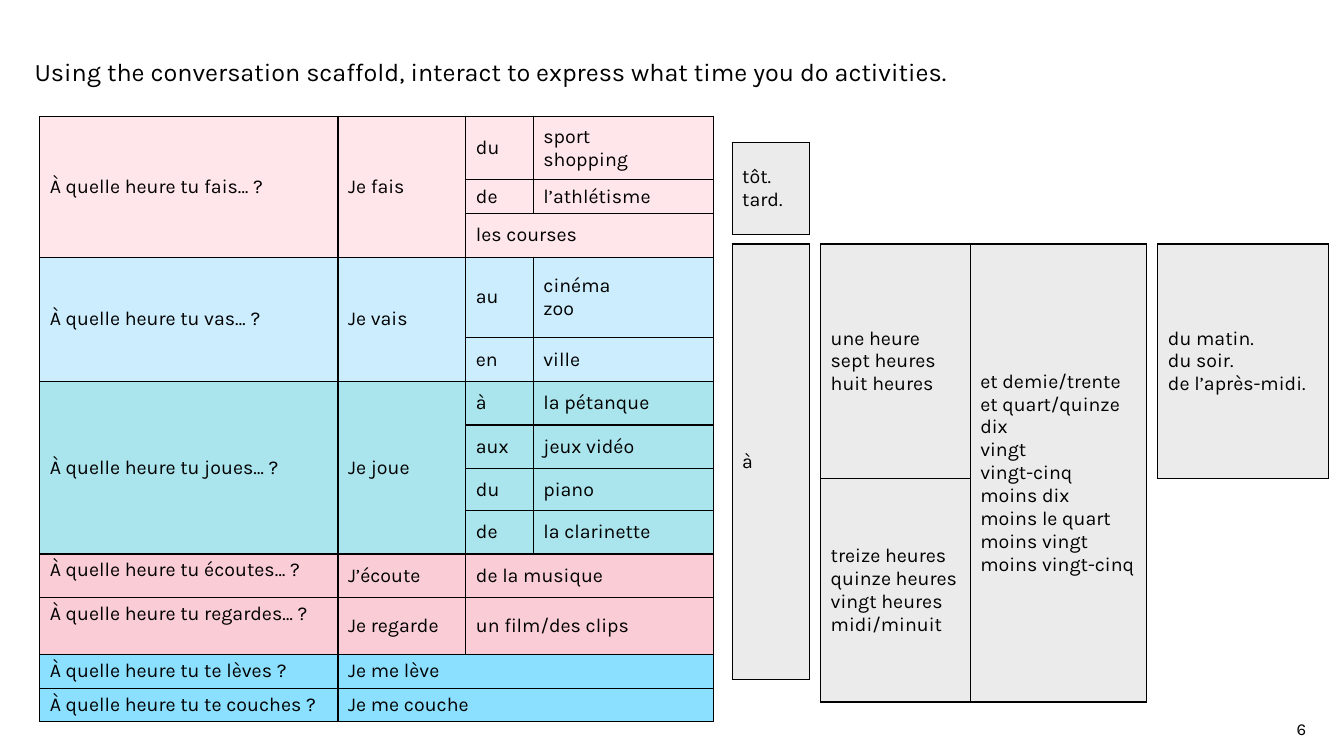
from lxml import etree
from pptx import Presentation
from pptx import util as u
from pptx.dml.color import RGBColor
from pptx.enum import text
from pptx.oxml.ns import qn

COLOURS = {"ink": "000000", "rose": "FFE6EA", "sky": "CBEDFD", "teal": "AAE4EC",
           "pink": "FACDD6", "blue": "8CE0FF", "grey": "EBEBEB"}
LEFT, UP = "<", "^"
FRAME = {"margin_left": 0, "margin_right": 0, "margin_top": 0, "margin_bottom": 0,
         "word_wrap": True, "auto_size": text.MSO_AUTO_SIZE.NONE}
GRID = {"first_row": False, "horz_banding": False}

ACTIVITIES = [
    ("rose", 1.6, ["À quelle heure tu fais… ?", "Je fais", "du", "sport\nshopping"]),
    ("rose", 0.85, [UP, UP, "de", "l’athlétisme"]),
    ("rose", 1.1, [UP, UP, "les courses", LEFT]),
    ("sky", 2.03, ["À quelle heure tu vas… ?", "Je vais", "au", "cinéma\nzoo"]),
    ("sky", 1.1, [UP, UP, "en", "ville"]),
    ("teal", 1.1, ["À quelle heure tu joues… ?", "Je joue", "à", "la pétanque"]),
    ("teal", 1.1, [UP, UP, "aux", "jeux vidéo"]),
    ("teal", 1.05, [UP, UP, "du", "piano"]),
    ("teal", 1.1, [UP, UP, "de", "la clarinette"]),
    ("pink", 1.1, ["À quelle heure tu écoutes… ?", "J’écoute", "de la musique", LEFT]),
    ("pink", 1.43, ["À quelle heure tu regardes… ?", "Je regarde", "un film/des clips", LEFT]),
    ("blue", 0.85, ["À quelle heure tu te lèves ?", "Je me lève", LEFT, LEFT]),
    ("blue", 0.85, ["À quelle heure tu te couches ?", "Je me couche", LEFT, LEFT]),
]
MINUTES = ("et demie/trente\net quart/quinze\ndix\nvingt\nvingt-cinq\n"
           "moins dix\nmoins le quart\nmoins vingt\nmoins vingt-cinq")
HOURS = [
    ("grey", 5.91, ["une heure\nsept heures\nhuit heures", MINUTES]),
    ("grey", 5.63, ["treize heures\nquinze heures\nvingt heures\nmidi/minuit", UP]),
]


def colour(name):
    return RGBColor.from_string(COLOURS[name])


def apply(target, values):
    for name, value in values.items():
        setattr(target, name, value)


class Scaffold:
    """Conversation scaffold slide with its shared text and table style."""

    def __init__(self, slide):
        self.slide = slide

    def wording(self, frame, words, size, align=text.PP_ALIGN.LEFT):
        frame.text = words
        for line in frame.paragraphs:
            apply(line, {"alignment": align, "line_spacing": 1.0})
            apply(line.font, {"name": "Karla", "size": u.Pt(size), "bold": False})
            line.font.color.rgb = colour("ink")

    def title(self, words, left, top, width, height):
        heading = self.slide.shapes.title
        apply(heading, {"left": u.Cm(left), "top": u.Cm(top),
                        "width": u.Cm(width), "height": u.Cm(height)})
        apply(heading.text_frame, FRAME)
        heading.text_frame.vertical_anchor = text.MSO_ANCHOR.MIDDLE
        self.wording(heading.text_frame, words, 18)

    def page_number(self, words, left, top, width, height):
        number = self.slide.shapes.add_textbox(*map(u.Cm, (left, top, width, height)))
        apply(number.text_frame, FRAME)
        self.wording(number.text_frame, words, 12, text.PP_ALIGN.RIGHT)

    def border(self, cell):
        properties = cell._tc.get_or_add_tcPr()
        for side in ("a:lnL", "a:lnR", "a:lnT", "a:lnB"):
            line = etree.SubElement(properties, qn(side), w=str(u.Pt(1)))
            fill = etree.SubElement(line, qn("a:solidFill"))
            etree.SubElement(fill, qn("a:srgbClr"), val=COLOURS["ink"])

    def table(self, left, top, widths, rows, top_cells=()):
        height = sum(row[1] for row in rows)
        place = map(u.Cm, (left, top, sum(widths), height))
        grid = self.slide.shapes.add_table(len(rows), len(widths), *place).table
        apply(grid, GRID)
        for column, width in zip(grid.columns, widths):
            column.width = u.Cm(width)
        for r, (shade, row_height, entries) in enumerate(rows):
            grid.rows[r].height = u.Cm(row_height)
            for c, words in enumerate(entries):
                cell = grid.cell(r, c)
                self.border(cell)
                cell.fill.solid()
                cell.fill.fore_color.rgb = colour(shade)
                if words in (LEFT, UP):
                    continue
                last_row, last_column = r, c
                while last_row + 1 < len(rows) and rows[last_row + 1][2][c] == UP:
                    last_row += 1
                while last_column + 1 < len(widths) and entries[last_column + 1] == LEFT:
                    last_column += 1
                if (last_row, last_column) != (r, c):
                    cell.merge(grid.cell(last_row, last_column))
                at_top = (r, c) in top_cells
                cell.vertical_anchor = text.MSO_ANCHOR.TOP if at_top else text.MSO_ANCHOR.MIDDLE
                self.wording(cell.text_frame, words, 14)


def main():
    deck = Presentation()
    apply(deck, {"slide_width": u.Cm(33.87), "slide_height": u.Cm(19.05)})
    scaffold = Scaffold(deck.slides.add_slide(deck.slide_layouts[5]))
    scaffold.title("Using the conversation scaffold, interact to express what time you do activities.",
                   0.87, 1.37, 30.1, 0.84)
    scaffold.table(1, 2.93, [7.52, 3.22, 1.7, 4.55], ACTIVITIES, {(9, 0), (10, 0)})
    scaffold.table(18.45, 3.59, [1.96], [("grey", 2.32, ["tôt.\ntard."])])
    scaffold.table(18.45, 6.15, [1.96], [("grey", 10.98, ["à"])])
    scaffold.table(20.68, 6.15, [3.77, 4.45], HOURS)
    scaffold.table(29.18, 6.15, [4.3], [("grey", 5.91, ["du matin.\ndu soir.\nde l’après-midi."])])
    scaffold.page_number("6", 30.9, 18.1, 2.02, 0.5)
    deck.save("out.pptx")


if __name__ == "__main__":
    main()
